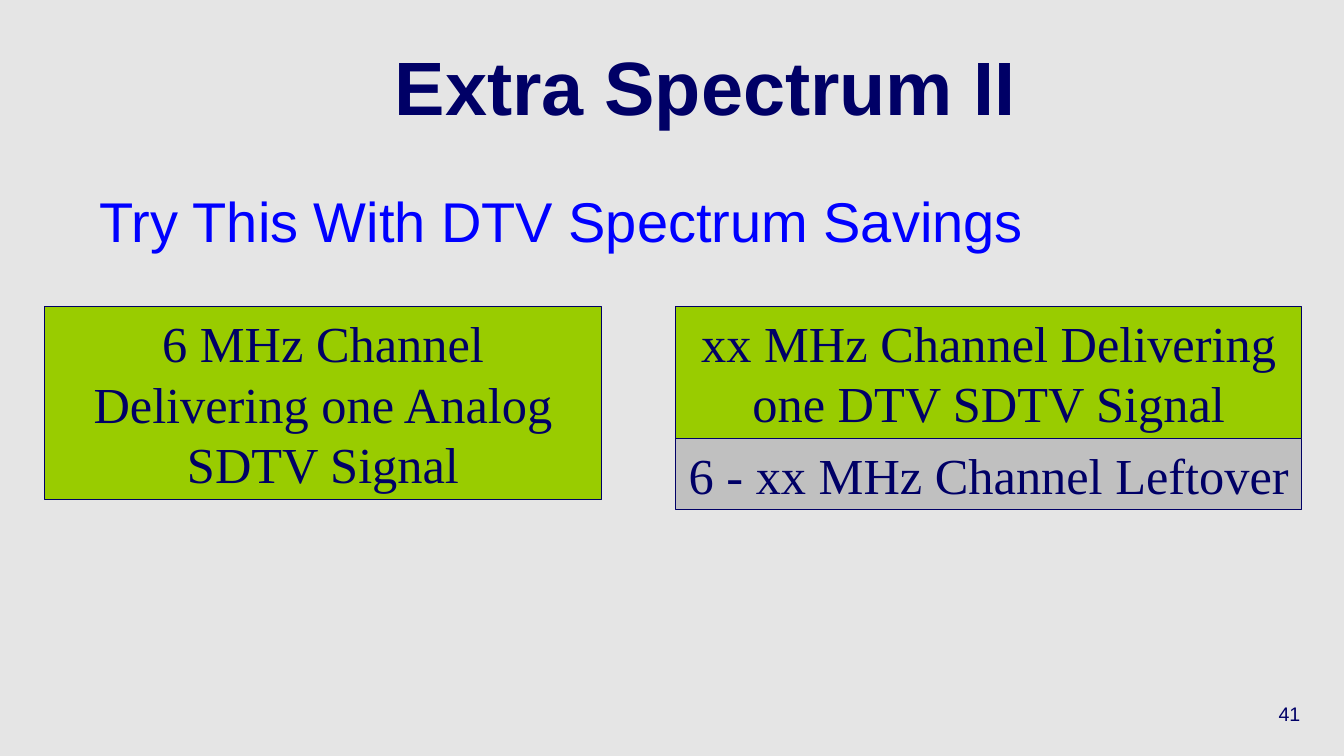
from pptx import Presentation
from pptx.dml.color import RGBColor
from pptx.enum.shapes import MSO_SHAPE
from pptx.enum.text import MSO_ANCHOR, PP_ALIGN
from pptx.util import Pt

RECT = MSO_SHAPE.RECTANGLE
TOP, MIDDLE = MSO_ANCHOR.TOP, MSO_ANCHOR.MIDDLE
LEFT, CENTER, RIGHT = PP_ALIGN.LEFT, PP_ALIGN.CENTER, PP_ALIGN.RIGHT
NAVY, BLUE, GREEN, GRAY, PALE = "000066", "0000FF", "99CC00", "C0C0C0", "E5E5E5"

TITLE = {"name": "Arial", "size": Pt(54), "bold": True}
LEAD = {"name": "Arial", "size": Pt(40)}
BAND = {"name": "Times New Roman", "size": Pt(36)}
PAGE = {"name": "Arial", "size": Pt(14)}


def paint(target, color):
    target.rgb = RGBColor.from_string(color)


def write(shape, text, style, color, align=CENTER, anchor=MIDDLE, wrap=True):
    frame = shape.text_frame
    frame.word_wrap = wrap
    frame.vertical_anchor = anchor
    para = frame.paragraphs[0]
    para.text = text
    para.alignment = align
    for key, value in style.items():
        setattr(para.font, key, value)
    paint(para.font.color, color)
    return para


def add_text(slide, box, *args, **format):
    shape = slide.shapes.add_textbox(*map(Pt, box))
    return write(shape, *args, **format)


def add_band(slide, box, text, fill, wrap=True):
    shape = slide.shapes.add_shape(RECT, *map(Pt, box))
    shape.shadow.inherit = False
    shape.fill.solid()
    paint(shape.fill.fore_color, fill)
    paint(shape.line.color, NAVY)
    shape.line.width = Pt(0.75)
    write(shape, text, BAND, NAVY, wrap=wrap)


# Bands stacked from the top of the box, each with its own height
def add_stack(slide, box, bands):
    left, top, width = box
    for height, text, fill, wrap in bands:
        add_band(slide, (left, top, width, height), text, fill, wrap)
        top += height


def build():
    deck = Presentation()
    deck.slide_width, deck.slide_height = Pt(960), Pt(540)
    slide = deck.slides.add_slide(deck.slide_layouts[6])
    slide.background.fill.solid()
    paint(slide.background.fill.fore_color, PALE)

    # Page number, title and lead line
    add_text(slide, (736, 492, 200, 36), "41", PAGE, NAVY, align=RIGHT)
    title = add_text(slide, (64, 24, 880, 90), "Extra Spectrum II", TITLE, NAVY)
    title.line_spacing = 0.7
    add_text(slide, (64, 130, 880, 320), "Try This With DTV Spectrum Savings",
             LEAD, BLUE, align=LEFT, anchor=TOP)

    # Analog channel beside the split digital channel
    add_stack(slide, (32, 219, 397.5), [
        (138, "6 MHz Channel Delivering one Analog SDTV Signal", GREEN, True),
    ])
    add_stack(slide, (482.5, 219, 447.5), [
        (94, "xx MHz Channel Delivering one DTV SDTV Signal", GREEN, True),
        (51, "6 - xx MHz Channel Leftover", GRAY, False),
    ])
    deck.save("out.pptx")


if __name__ == "__main__":
    build()
